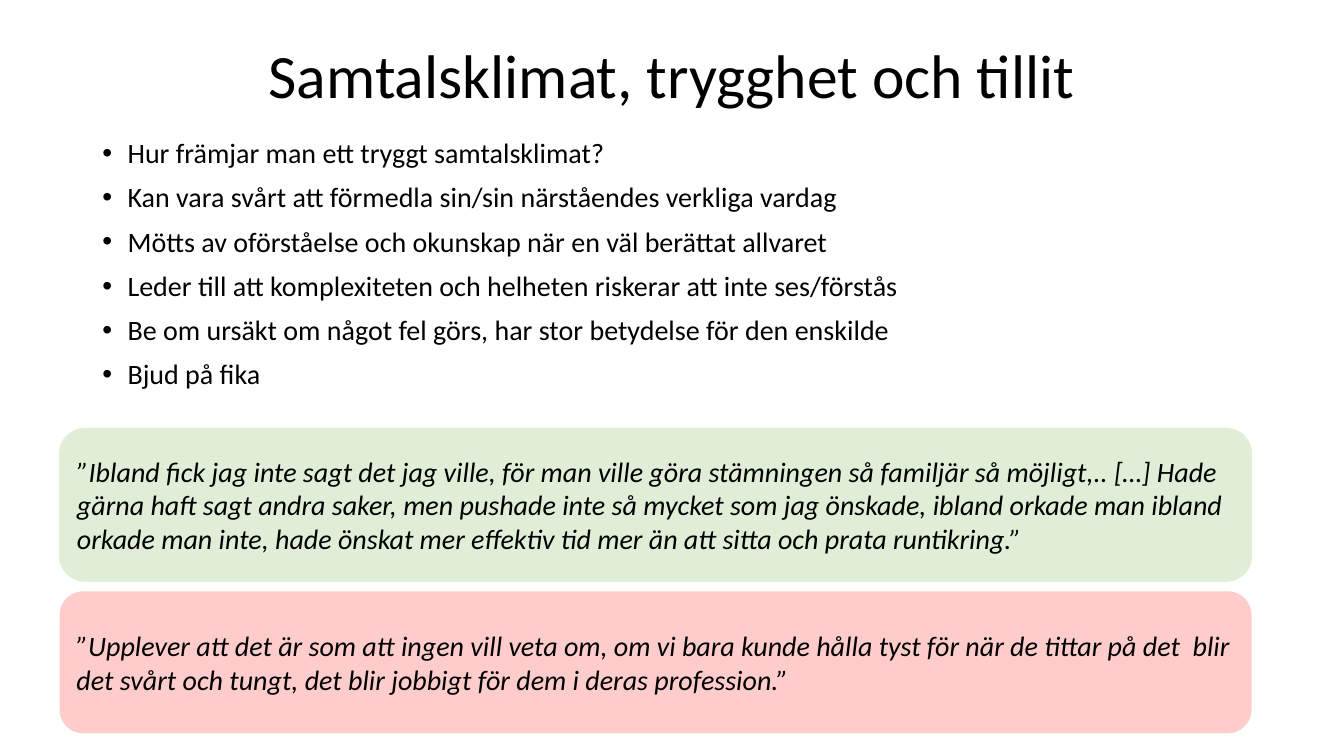
from dataclasses import dataclass

from lxml import etree
from pptx import Presentation
from pptx.dml.color import RGBColor
from pptx.enum.shapes import MSO_SHAPE
from pptx.enum.text import MSO_ANCHOR, PP_ALIGN
from pptx.oxml.ns import qn
from pptx.slide import Slide
from pptx.text.text import TextFrame, _Paragraph
from pptx.util import Inches, Pt

ROUNDED = MSO_SHAPE.ROUNDED_RECTANGLE
TOP, MIDDLE = MSO_ANCHOR.TOP, MSO_ANCHOR.MIDDLE
LEFT, CENTER = PP_ALIGN.LEFT, PP_ALIGN.CENTER

SLIDE_WIDTH, SLIDE_HEIGHT = Inches(13.33), Inches(7.5)
COLUMNS, ROWS = 160, 90
FONT = "Calibri"
INK = "000000"
TITLE_SIZE, BODY_SIZE = 44, 20
BULLET_INDENT = Inches(0.25)


@dataclass(frozen=True)
class Area:
    """A rectangle in grid columns and rows."""
    column: float
    row: float
    columns: float
    rows: float

    def box(self) -> tuple[int, int, int, int]:
        """Left, top, width and height in EMU."""
        return (round(self.column * SLIDE_WIDTH / COLUMNS),
                round(self.row * SLIDE_HEIGHT / ROWS),
                round(self.columns * SLIDE_WIDTH / COLUMNS),
                round(self.rows * SLIDE_HEIGHT / ROWS))


@dataclass(frozen=True)
class Quote:
    text: str
    area: Area
    fill: str
    opacity: int = 100
    border: str = ""


TITLE = "Samtalsklimat, trygghet och tillit"
TITLE_AREA = Area(11, 4.8, 138, 17.4)
POINTS = (
    "Hur främjar man ett tryggt samtalsklimat?",
    "Kan vara svårt att förmedla sin/sin närståendes verkliga vardag",
    "Mötts av oförståelse och okunskap när en väl berättat allvaret",
    "Leder till att komplexiteten och helheten riskerar att inte ses/förstås",
    "Be om ursäkt om något fel görs, har stor betydelse för den enskilde",
    "Bjud på fika",
)
POINTS_AREA = Area(11, 16, 138, 28)
QUOTES = (
    Quote("”Ibland fick jag inte sagt det jag ville, för man ville göra "
          "stämningen så familjär så möjligt,.. […] Hade gärna haft sagt "
          "andra saker, men pushade inte så mycket som jag önskade, ibland "
          "orkade man ibland orkade man inte, hade önskat mer effektiv tid "
          "mer än att sitta och prata runtikring.”",
          Area(7.1, 51, 141.9, 18.2), "C5E0B4", 53, "E2F0D9"),
    Quote("”Upplever att det är som att ingen vill veta om, om vi bara kunde "
          "hålla tyst för när de tittar på det  blir det svårt och tungt, "
          "det blir jobbigt för dem i deras profession.”",
          Area(7.1, 70.4, 141.9, 16.9), "FFCCCC"),
)


def color(value: str) -> RGBColor:
    return RGBColor.from_string(value)


def write(paragraph: _Paragraph, text: str, size: int,
          italic: bool = False) -> None:
    run = paragraph.add_run()
    run.text = text
    run.font.name = FONT
    run.font.size = Pt(size)
    run.font.italic = italic
    run.font.color.rgb = color(INK)


def add_bullet(paragraph: _Paragraph) -> None:
    properties = paragraph._p.get_or_add_pPr()
    properties.set("marL", str(BULLET_INDENT))
    properties.set("indent", str(-BULLET_INDENT))
    etree.SubElement(properties, qn("a:buFont"), typeface="Arial")
    etree.SubElement(properties, qn("a:buChar"), char="•")


def add_text_area(slide: Slide, area: Area) -> TextFrame:
    frame = slide.shapes.add_textbox(*area.box()).text_frame
    frame.word_wrap = True
    frame.vertical_anchor = TOP
    return frame


def add_title(slide: Slide) -> None:
    heading = add_text_area(slide, TITLE_AREA).paragraphs[0]
    heading.alignment = CENTER
    heading.line_spacing = 0.9
    write(heading, TITLE, TITLE_SIZE)


def add_points(slide: Slide) -> None:
    frame = add_text_area(slide, POINTS_AREA)
    for index, point in enumerate(POINTS):
        paragraph = frame.add_paragraph() if index else frame.paragraphs[0]
        paragraph.line_spacing = 0.9
        paragraph.space_before = Pt(10)
        add_bullet(paragraph)
        write(paragraph, point, BODY_SIZE)


def add_quote(slide: Slide, quote: Quote) -> None:
    panel = slide.shapes.add_shape(ROUNDED, *quote.area.box())
    panel.shadow.inherit = False
    panel.fill.solid()
    panel.fill.fore_color.rgb = color(quote.fill)
    if quote.opacity < 100:
        shade = panel._element.spPr.find(qn("a:solidFill"))[0]
        etree.SubElement(shade, qn("a:alpha"), val=str(quote.opacity * 1000))
    if quote.border:
        panel.line.color.rgb = color(quote.border)
        panel.line.width = Pt(1)
    else:
        panel.line.fill.background()
    frame = panel.text_frame
    frame.word_wrap = True
    frame.vertical_anchor = MIDDLE
    frame.paragraphs[0].alignment = LEFT
    write(frame.paragraphs[0], quote.text, BODY_SIZE, italic=True)


def main() -> None:
    deck = Presentation()
    deck.slide_width, deck.slide_height = SLIDE_WIDTH, SLIDE_HEIGHT
    slide = deck.slides.add_slide(deck.slide_layouts[6])
    add_title(slide)
    add_points(slide)
    for quote in QUOTES:
        add_quote(slide, quote)
    deck.save("out.pptx")


if __name__ == "__main__":
    main()
